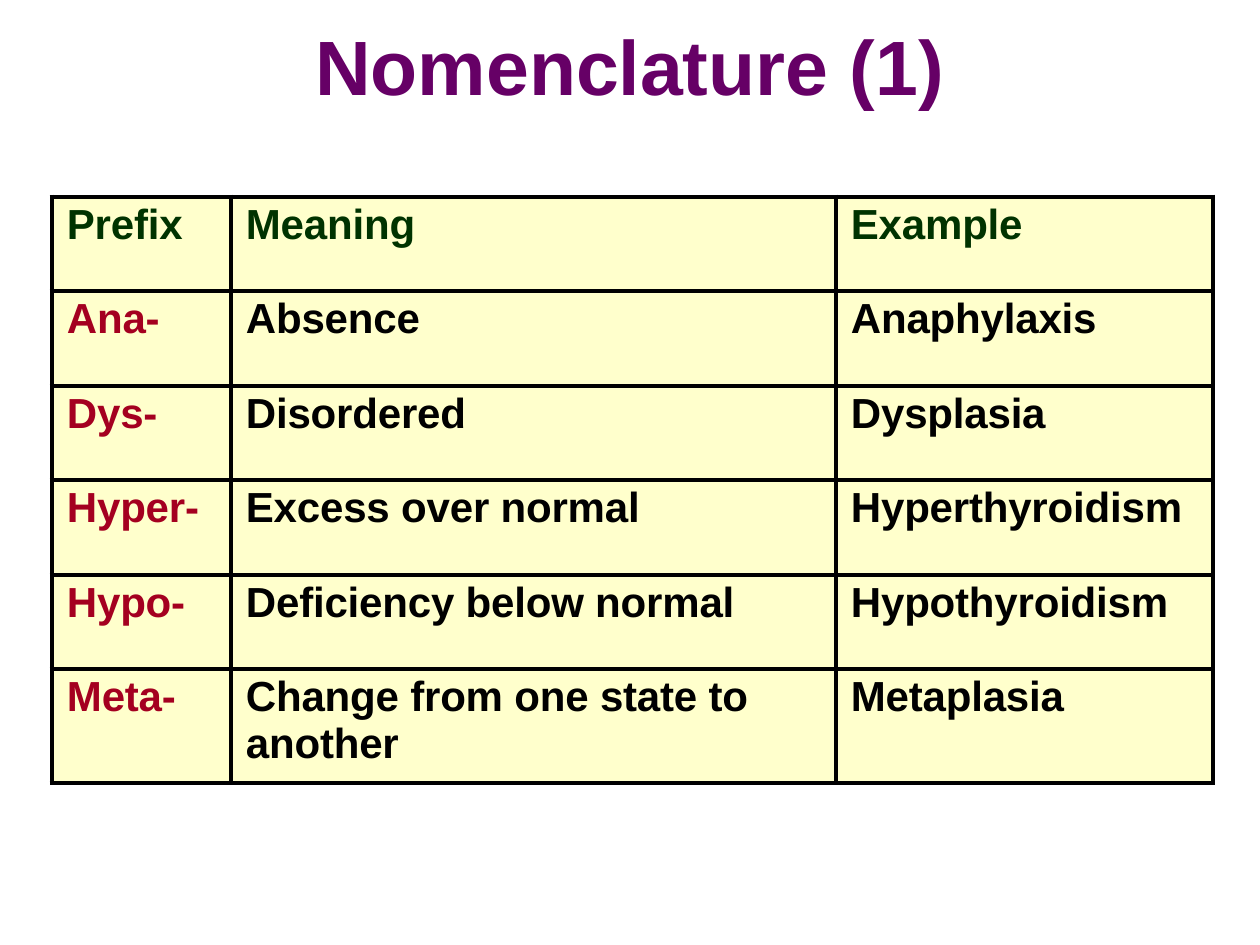
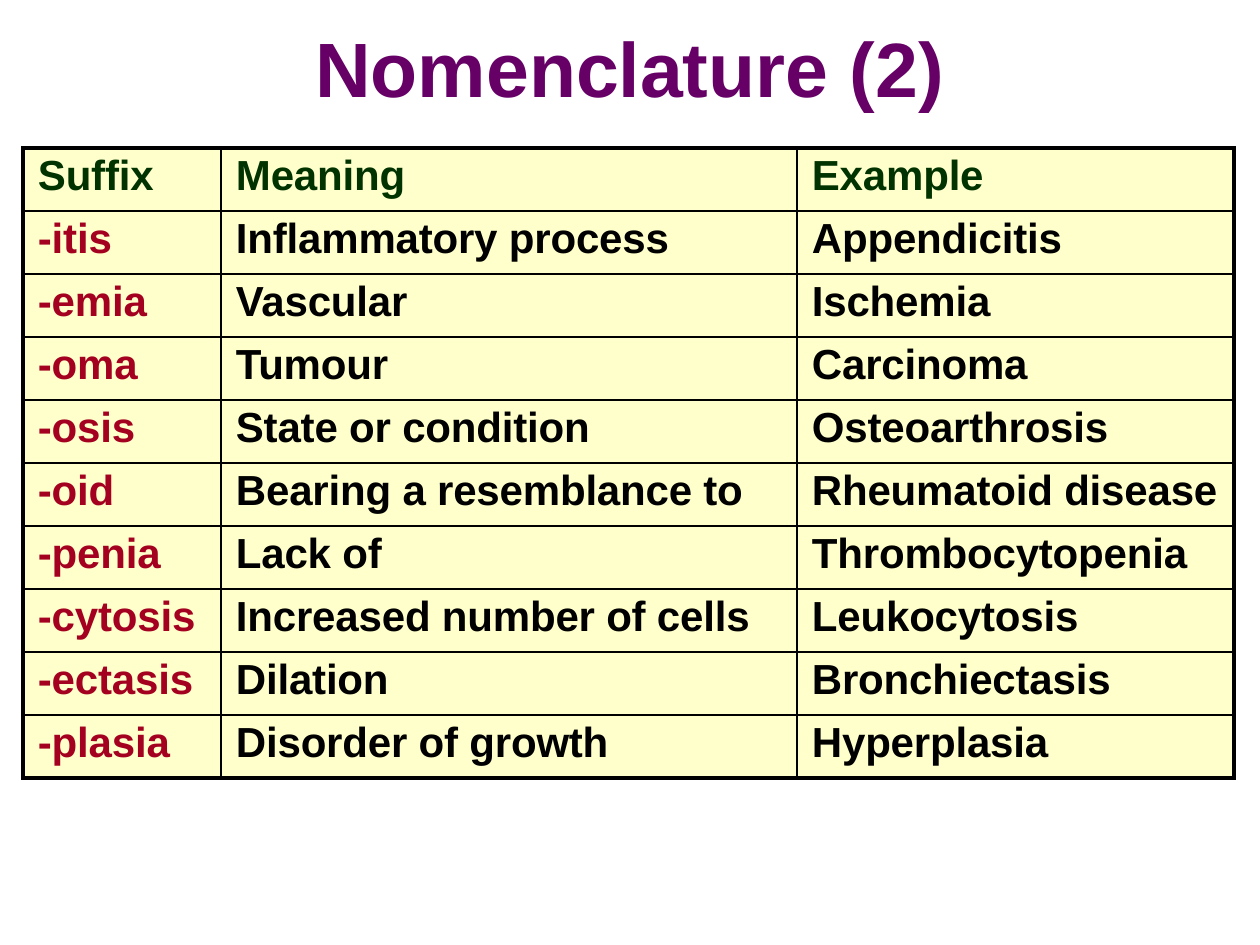
from dataclasses import dataclass

from lxml import etree
from pptx import Presentation
from pptx import util as u
from pptx.dml import color
from pptx.enum import text
from pptx.oxml import ns


@dataclass(frozen=True)
class Theme:
    font: str = "Arial"
    title_size: int = 44
    table_size: int = 24
    title: str = "660066"
    header: str = "003300"
    affix: str = "A40020"
    body: str = "000000"
    cell: str = "FFFFCC"
    border: str = "000000"


theme = Theme()


def px(length):
    return u.Emu(round(length * 914400 / 126))


def style_text(frame, size, ink, tracking=0):
    for para in frame.paragraphs:
        for span in para.runs:
            span.font.name = theme.font
            span.font.size = u.Pt(size)
            span.font.bold = True
            span.font.color.rgb = color.RGBColor.from_string(ink)
            span.font._element.set("spc", str(tracking))


prefixes = [
    ("Prefix", "Meaning", "Example"),
    ("Ana-", "Absence", "Anaphylaxis"),
    ("Dys-", "Disordered", "Dysplasia"),
    ("Hyper-", "Excess over normal", "Hyperthyroidism"),
    ("Hypo-", "Deficiency below normal", "Hypothyroidism"),
    ("Meta-", "Change from one state to\nanother", "Metaplasia"),
]
suffixes = [
    ("Suffix", "Meaning", "Example"),
    ("-itis", "Inflammatory process", "Appendicitis"),
    ("-emia", "Vascular", "Ischemia"),
    ("-oma", "Tumour", "Carcinoma"),
    ("-osis", "State or condition", "Osteoarthrosis"),
    ("-oid", "Bearing a resemblance to", "Rheumatoid disease"),
    ("-penia", "Lack of", "Thrombocytopenia"),
    ("-cytosis", "Increased number of cells", "Leukocytosis"),
    ("-ectasis", "Dilation", "Bronchiectasis"),
    ("-plasia", "Disorder of growth", "Hyperplasia"),
]
pages = [
    dict(title="Nomenclature (1)", title_top=18, entries=prefixes,
         left=52, top=197, widths=[179, 605, 377],
         heights=[94, 95, 94, 95, 94, 114], outer=3, inner=3),
    dict(title="Nomenclature (2)", title_top=20, entries=suffixes,
         left=23, top=148, widths=[198, 576, 437],
         heights=[63] * len(suffixes), outer=2.25, inner=1),
]

deck = Presentation()
deck.slide_width, deck.slide_height = px(1260), px(945)

for content in pages:
    page = deck.slides.add_slide(deck.slide_layouts[6])

    box = page.shapes.add_textbox(px(314), px(content["title_top"]), px(632), px(96))
    frame = box.text_frame
    frame.text = content["title"]
    frame.word_wrap = False
    frame.margin_left = frame.margin_right = frame.margin_bottom = 0
    frame.margin_top = px(1)
    frame.paragraphs[0].alignment = text.PP_ALIGN.CENTER
    frame.paragraphs[0].space_before = u.Pt(1)
    style_text(frame, theme.title_size, theme.title)

    entries, widths, heights = content["entries"], content["widths"], content["heights"]
    table = page.shapes.add_table(
        len(entries), len(widths), px(content["left"]), px(content["top"]),
        px(sum(widths)), px(sum(heights))).table
    table.first_row = table.horz_banding = False
    for column, width in zip(table.columns, widths):
        column.width = px(width)
    for row, height in zip(table.rows, heights):
        row.height = px(height)

    last_row, last_column = len(entries) - 1, len(widths) - 1
    for r, entry in enumerate(entries):
        for c, wording in enumerate(entry):
            cell = table.cell(r, c)
            cell.text_frame.text = wording
            cell.margin_left, cell.margin_top = px(15), px(5)
            cell.margin_right = cell.margin_bottom = 0
            cell.text_frame.paragraphs[0].space_before = u.Pt(3)
            ink = theme.header if r == 0 else theme.affix if c == 0 else theme.body
            style_text(cell.text_frame, theme.table_size, ink, -10)

            on_edge = {"lnL": c == 0, "lnR": c == last_column,
                       "lnT": r == 0, "lnB": r == last_row}
            properties = cell._tc.get_or_add_tcPr()
            for side, outside in on_edge.items():
                weight = content["outer"] if outside else content["inner"]
                line = etree.SubElement(properties, ns.qn(f"a:{side}"), w=str(u.Pt(weight)))
                fill = etree.SubElement(line, ns.qn("a:solidFill"))
                etree.SubElement(fill, ns.qn("a:srgbClr"), val=theme.border)
            cell.fill.solid()
            cell.fill.fore_color.rgb = color.RGBColor.from_string(theme.cell)

deck.save("out.pptx")
